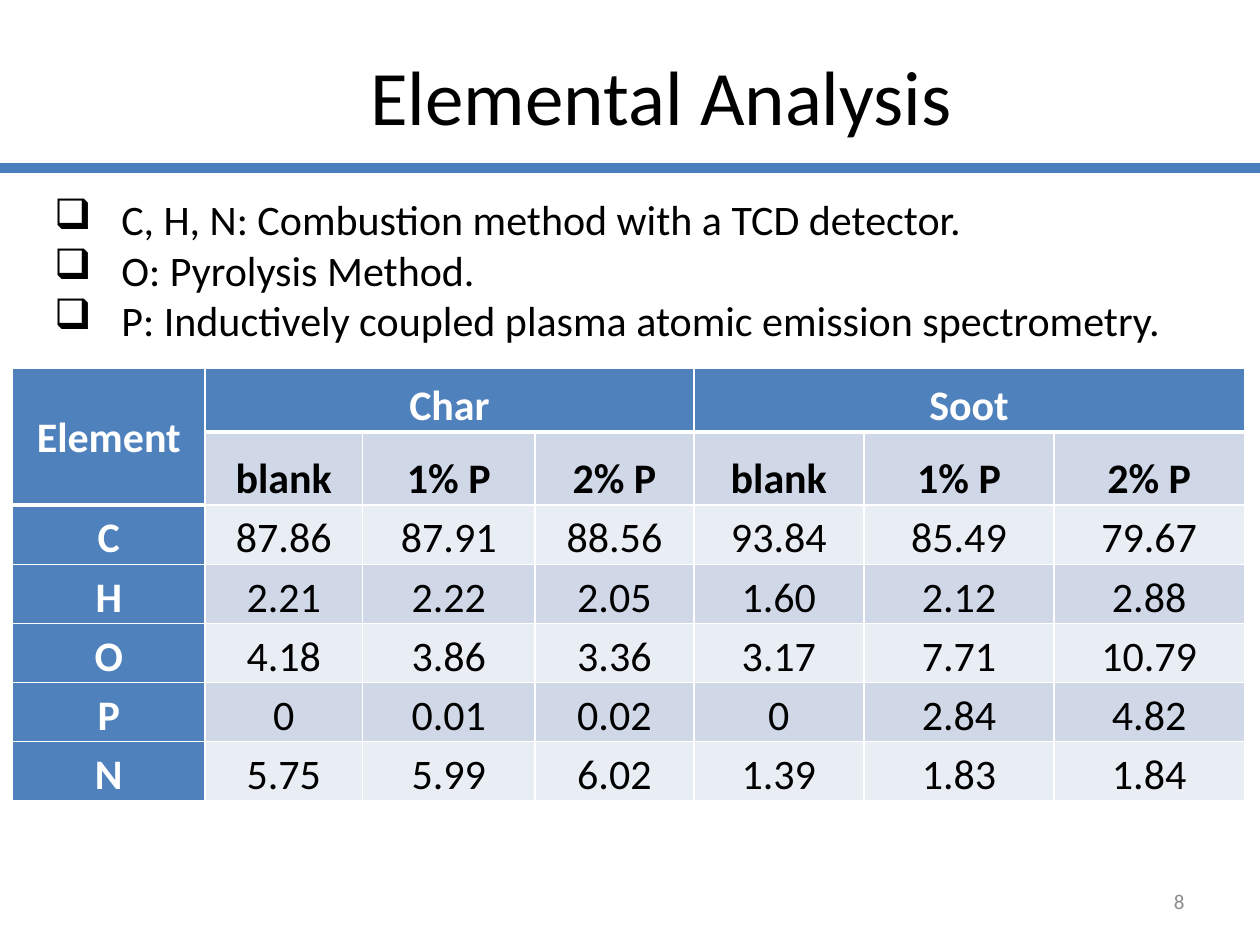
import pptx
import pptx.util
import pptx.dml.color
import pptx.enum.text
import pptx.enum.shapes
import pptx.oxml
import pptx.oxml.ns
from dataclasses import dataclass
from lxml import etree

Pt = pptx.util.Pt
Align = pptx.enum.text.PP_ALIGN
Anchor = pptx.enum.text.MSO_ANCHOR
qn = pptx.oxml.ns.qn


@dataclass(frozen=True)
class Theme:
    font: str = "Calibri"
    black: str = "000000"
    white: str = "FFFFFF"
    grey: str = "8C8C8C"
    rule: str = "4B7EBC"
    blue: str = "4F81BD"
    dark: str = "D0D8E8"
    light: str = "E9EDF4"
    title: int = 44
    body: int = 24
    small: int = 12


THEME = Theme()
COLS = [110, 90, 98.6, 90.7, 97.2, 108.7, 108.7]
ROWS = [36.7, 41.8] + [33.8] * 5
POINTS = [
    "C, H, N: Combustion method with a TCD detector.",
    "O: Pyrolysis Method.",
    "P: Inductively coupled plasma atomic emission spectrometry.",
]
DATA = [
    ["Element", "Char", "", "", "Soot", "", ""],
    ["", "blank", "1% P", "2% P", "blank", "1% P", "2% P"],
    ["C", "87.86", "87.91", "88.56", "93.84", "85.49", "79.67"],
    ["H", "2.21", "2.22", "2.05", "1.60", "2.12", "2.88"],
    ["O", "4.18", "3.86", "3.36", "3.17", "7.71", "10.79"],
    ["P", "0", "0.01", "0.02", "0", "2.84", "4.82"],
    ["N", "5.75", "5.99", "6.02", "1.39", "1.83", "1.84"],
]


def rgb(code):
    return pptx.dml.color.RGBColor.from_string(code)


def style(para, size, color, align=Align.LEFT, bold=False):
    para.alignment = align
    font = para.font
    font.name = THEME.font
    font.size = Pt(size)
    font.bold = bold
    font.color.rgb = rgb(color)


def add_box(slide, area, anchor=Anchor.MIDDLE, wrap=True):
    frame = slide.shapes.add_textbox(*map(Pt, area)).text_frame
    frame.word_wrap = wrap
    frame.vertical_anchor = anchor
    return frame


def add_label(slide, area, text, size, color, align):
    para = add_box(slide, area).paragraphs[0]
    para.text = text
    style(para, size, color, align)


def add_rule(slide, y, width):
    kind = pptx.enum.shapes.MSO_CONNECTOR.STRAIGHT
    line = slide.shapes.add_connector(kind, 0, Pt(y), Pt(width), Pt(y))
    line.line.color.rgb = rgb(THEME.rule)
    line.line.width = Pt(6)
    etree.SubElement(line._element.spPr, qn("a:effectLst"))


def add_list(slide, area, items, indent):
    frame = add_box(slide, area, Anchor.TOP, wrap=False)
    for i, item in enumerate(items):
        para = frame.add_paragraph() if i else frame.paragraphs[0]
        para.text = item
        props = para._p.get_or_add_pPr()
        props.set("marL", str(Pt(indent)))
        props.set("indent", str(-Pt(indent)))
        etree.SubElement(props, qn("a:buChar"), char="❑")
        style(para, THEME.body, THEME.black)


def add_edge(cell, side, width):
    props = cell._tc.get_or_add_tcPr()
    edge = etree.SubElement(props, qn("a:ln" + side), w=str(Pt(width)))
    fill = etree.SubElement(edge, qn("a:solidFill"))
    etree.SubElement(fill, qn("a:srgbClr"), val=THEME.white)


def fill_cell(cell, row, col, text):
    head = row == 0 or col == 0
    heavy_top = row == 1 or (row == 2 and col == 0)
    heavy_base = row == 0 or (row == 1 and col == 0)
    for side, heavy in zip("LRTB", (False, False, heavy_top, heavy_base)):
        add_edge(cell, side, 3 if heavy else 1)
    cell.fill.solid()
    band = THEME.dark if row % 2 else THEME.light
    cell.fill.fore_color.rgb = rgb(THEME.blue if head else band)
    cell.margin_left = cell.margin_right = Pt(5)
    cell.margin_top = cell.margin_bottom = 0
    cell.vertical_anchor = Anchor.MIDDLE if row == col == 0 else Anchor.BOTTOM
    para = cell.text_frame.paragraphs[0]
    para.text = text
    para.line_spacing = 1.07
    color = THEME.white if head else THEME.black
    style(para, THEME.body, color, Align.CENTER, head or row == 1)


def add_grid(slide, left, top):
    area = map(Pt, (left, top, sum(COLS), sum(ROWS)))
    grid = slide.shapes.add_table(len(ROWS), len(COLS), *area).table
    for col, width in zip(grid.columns, COLS):
        col.width = Pt(width)
    for row, height in zip(grid.rows, ROWS):
        row.height = Pt(height)
    for r, texts in enumerate(DATA):
        for c, text in enumerate(texts):
            fill_cell(grid.cell(r, c), r, c, text)
    grid.cell(0, 0).merge(grid.cell(1, 0))
    for c in (1, 4):
        grid.cell(0, c).merge(grid.cell(0, c + 2))


def main():
    deck = pptx.Presentation()
    deck.slide_width, deck.slide_height = Pt(720), Pt(540)
    slide = deck.slides.add_slide(deck.slide_layouts[6])
    add_rule(slide, 96, 720)
    add_label(slide, (108, 18, 540, 72), "Elemental Analysis",
              THEME.title, THEME.black, Align.CENTER)
    add_label(slide, (516, 500.5, 168, 28.8), "8",
              THEME.small, THEME.grey, Align.RIGHT)
    add_grid(slide, 7.2, 210.2)
    add_list(slide, (23.8, 107.3, 647.3, 94.3), POINTS, 38.5)
    deck.save("out.pptx")


if __name__ == "__main__":
    main()
